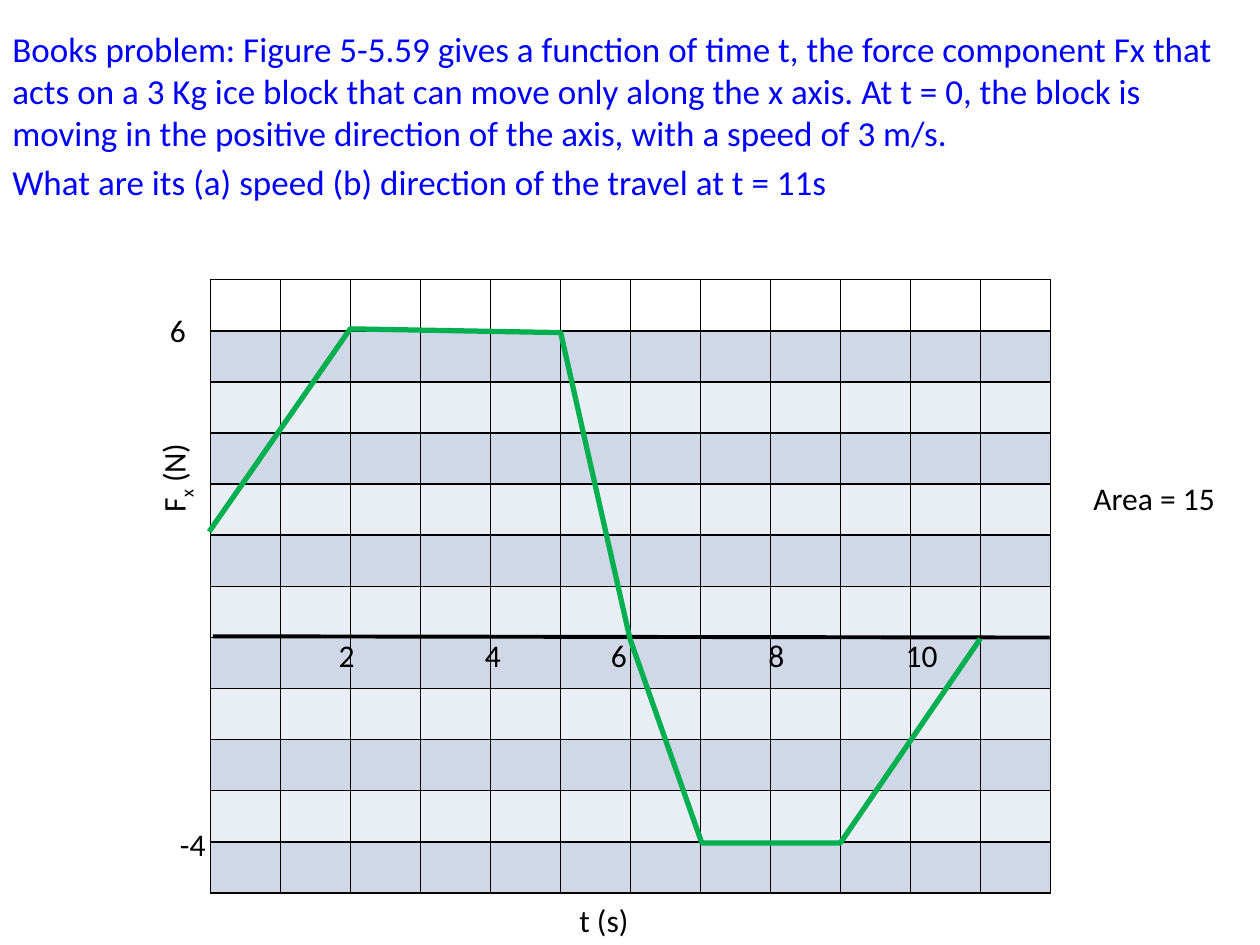
from typing import NamedTuple

from lxml import etree
from pptx import Presentation
from pptx import util as u
from pptx.dml.color import RGBColor
from pptx.enum import text as tx
from pptx.oxml import ns

BLACK = RGBColor(0, 0, 0)
BLUE = RGBColor(0, 0, 255)
GREEN = RGBColor(0x00, 0xB0, 0x50)
DARK = RGBColor(0xD0, 0xD8, 0xE8)
LIGHT = RGBColor(0xE9, 0xED, 0xF4)

COUNT = 12
LEFT, TOP, WIDTH, HEIGHT = 1.67, 2.22, 6.67, 4.87

QUESTION = (
    "Books problem: Figure 5-5.59 gives a function of time t, the force "
    "component Fx that acts on a 3 Kg ice block that can move only along the "
    "x axis. At t = 0, the block is moving in the positive direction of the "
    "axis, with a speed of 3 m/s.",
    "What are its (a) speed (b) direction of the travel at t = 11s",
)


class Label(NamedTuple):
    text: str
    left: float
    top: float
    width: float
    turn: int = 0
    sub: str = ""
    tail: str = ""


class Curve(NamedTuple):
    points: tuple
    color: RGBColor
    weight: float


AXIS = Curve(((1.69, 5.05), (8.33, 5.06)), BLACK, 2.25)
FORCE = Curve(
    ((1.66, 4.22), (2.78, 2.61), (4.45, 2.64), (5, 5.07),
     (5.57, 6.69), (6.67, 6.69), (7.78, 5.07)),
    GREEN, 3,
)

TICKS = (
    Label("-4", 1.33, 6.5, 0.41),
    Label("6", 1.25, 2.42, 0.33),
    Label("2", 2.59, 5, 0.33),
    Label("4", 3.75, 5, 0.33),
    Label("6", 4.75, 5, 0.33),
    Label("8", 6, 5, 0.33),
    Label("10", 7.09, 5, 0.46),
)
TITLES = (
    Label("Area = 15", 8.58, 3.75, 1.18),
    Label("F", 0.99, 3.58, 0.77, 270, "x", " (N)"),
    Label("t (s)", 4.5, 7.1, 0.6),
)


def style(font, size: float, color: RGBColor) -> None:
    for key, value in {"name": "Calibri", "size": u.Pt(size)}.items():
        setattr(font, key, value)
    font.color.rgb = color


def add_text(slide) -> None:
    box = slide.shapes.add_textbox(
        u.Inches(0), u.Inches(0.17), u.Inches(10), u.Inches(1.67))
    frame = box.text_frame
    frame.word_wrap = True
    frame.text = "\n".join(QUESTION)
    for para in frame.paragraphs:
        style(para.runs[0].font, 20, BLUE)
    frame.paragraphs[1].space_before = u.Pt(4)


def add_edges(cell) -> None:
    props = cell._tc.get_or_add_tcPr()
    for side in ("lnL", "lnR", "lnT", "lnB"):
        line = etree.SubElement(
            props, ns.qn(f"a:{side}"), w=str(u.Pt(1)))
        fill = etree.SubElement(line, ns.qn("a:solidFill"))
        etree.SubElement(fill, ns.qn("a:srgbClr"), val=str(BLACK))


def add_grid(slide) -> None:
    table = slide.shapes.add_table(
        COUNT, COUNT, u.Inches(LEFT), u.Inches(TOP),
        u.Inches(WIDTH), u.Inches(HEIGHT)).table
    for key in ("first_row", "horz_banding"):
        setattr(table, key, False)
    for col in table.columns:
        col.width = u.Inches(WIDTH / COUNT)
    margins = dict.fromkeys(("margin_top", "margin_bottom"), 0)
    for i, row in enumerate(table.rows):
        row.height = u.Inches(HEIGHT / COUNT)
        for cell in row.cells:
            for key, value in margins.items():
                setattr(cell, key, value)
            add_edges(cell)
            if i == 0:
                cell.fill.background()
            else:
                cell.fill.solid()
                cell.fill.fore_color.rgb = DARK if i % 2 else LIGHT


def add_curve(slide, curve: Curve) -> None:
    first, *rest = [(u.Inches(x), u.Inches(y)) for x, y in curve.points]
    path = slide.shapes.build_freeform(*first)
    path.add_line_segments(rest, close=False)
    shape = path.convert_to_shape()
    shape.shadow.inherit = False
    shape.fill.background()
    shape.line.color.rgb = curve.color
    shape.line.width = u.Pt(curve.weight)


def add_label(slide, label: Label) -> None:
    box = slide.shapes.add_textbox(
        u.Inches(label.left), u.Inches(label.top),
        u.Inches(label.width), u.Inches(0.4))
    box.rotation = label.turn
    frame = box.text_frame
    form = {"word_wrap": False,
            "auto_size": tx.MSO_AUTO_SIZE.SHAPE_TO_FIT_TEXT}
    for key, value in form.items():
        setattr(frame, key, value)
    for part in filter(None, (label.text, label.sub, label.tail)):
        run = frame.paragraphs[0].add_run()
        run.text = part
        style(run.font, 18, BLACK)
        if part == label.sub:
            run._r.get_or_add_rPr().set("baseline", "-25000")


def main() -> None:
    deck = Presentation()
    deck.slide_width, deck.slide_height = u.Inches(10), u.Inches(7.5)
    slide = deck.slides.add_slide(deck.slide_layouts[6])

    # Question
    add_text(slide)

    # Graph, from the grid up to the force curve
    add_grid(slide)
    add_curve(slide, AXIS)
    for label in TICKS:
        add_label(slide, label)
    add_curve(slide, FORCE)

    # Axis titles and area note
    for label in TITLES:
        add_label(slide, label)

    deck.save("out.pptx")


if __name__ == "__main__":
    main()
